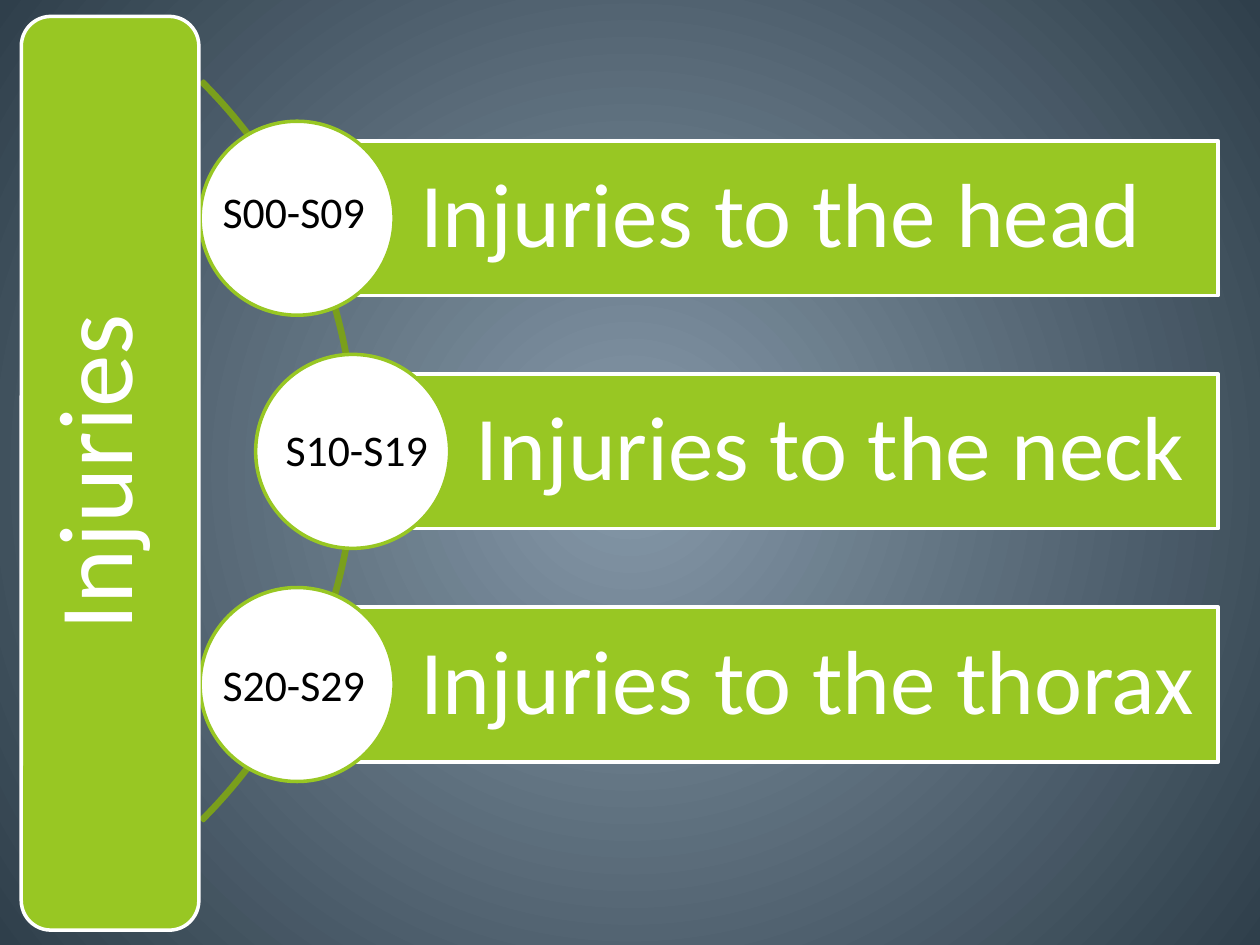
from lxml import etree
from pptx import Presentation
from pptx.dml.color import RGBColor
from pptx.enum.shapes import MSO_SHAPE
from pptx.enum.text import MSO_ANCHOR, PP_ALIGN
from pptx.oxml.ns import qn
from pptx.util import Cm, Pt

GREEN, DARK_GREEN, WHITE, BLACK = "98C723", "7A9F1C", "FFFFFF", "000000"
ROW_HEIGHT, ROW_PITCH, CIRCLE_SIZE = 3.12, 4.7, 3.91

# Row text, code, left indent, and code offset from the bar's corner (cm)
ROWS = [
    ("Injuries to the head", "S00-S09", 0, (-1.75, 0.76)),
    ("Injuries to the neck", "S10-S19", 1.12, (-1.6, 0.86)),
    ("Injuries to the thorax", "S20-S29", 0, (-1.75, 0.89)),
]


def color(value):
    return RGBColor.from_string(value)


def add_box(page, kind, left, top, width, height, fill, line):
    box = page.shapes.add_shape(kind, Cm(left), Cm(top), Cm(width), Cm(height))
    box.shadow.inherit = False
    if fill:
        box.fill.solid()
        box.fill.fore_color.rgb = color(fill)
    else:
        box.fill.background()
    box.line.color.rgb = color(line)
    box.line.width = Pt(2)
    return box


def set_text(box, text, size, font_color, align=PP_ALIGN.LEFT):
    para = box.text_frame.paragraphs[0]
    para.text = text
    para.alignment = align
    para.font.name = "Calibri"
    para.font.size = Pt(size)
    para.font.color.rgb = color(font_color)
    return para


def add_text(page, left, top, width, height, *style):
    box = page.shapes.add_textbox(Cm(left), Cm(top), Cm(width), Cm(height))
    set_text(box, *style)
    return box


def paint_background(page):
    fill = page.background.fill
    fill.gradient()
    for stop, value in zip(fill.gradient_stops, ("8699A9", "2F3F4B")):
        stop.color.rgb = color(value)
    # Circular gradient spreading from the centre
    gradient = page.element.find(".//" + qn("a:gradFill"))
    linear = gradient.find(qn("a:lin"))
    circle = etree.Element(qn("a:path"), path="circle")
    etree.SubElement(circle, qn("a:fillToRect"),
                     l="50000", t="50000", r="50000", b="50000")
    gradient.replace(linear, circle)


def add_arc(page, left, top, size):
    arc = add_box(page, MSO_SHAPE.BLOCK_ARC, left, top, size, size, None, DARK_GREEN)
    for index, value in enumerate((189, 27, 0.003)):
        arc.adjustments[index] = value


def add_row(page, left, top, width, text, code, code_offset):
    # Bar
    bar = add_box(page, MSO_SHAPE.RECTANGLE, left, top, width, ROW_HEIGHT, GREEN, WHITE)
    frame = bar.text_frame
    frame.word_wrap = True
    frame.vertical_anchor = MSO_ANCHOR.MIDDLE
    frame.margin_left = Cm(2.48)
    frame.margin_top = frame.margin_right = frame.margin_bottom = Cm(0.35)
    set_text(bar, text, 52, WHITE).line_spacing = 0.9
    # Circle centred on the bar's left side
    add_box(page, MSO_SHAPE.OVAL, left - CIRCLE_SIZE / 2,
            top + (ROW_HEIGHT - CIRCLE_SIZE) / 2, CIRCLE_SIZE, CIRCLE_SIZE,
            WHITE, GREEN)
    # Code
    across, down = code_offset
    label = add_text(page, left + across, top + down, 3.38, 1.32, code, 25, BLACK)
    label.text_frame.word_wrap = False


def add_side_title(page, left, top, width, height, text):
    # Rounded bar turned on its side around its centre
    shift = (height - width) / 2
    bar = add_box(page, MSO_SHAPE.ROUNDED_RECTANGLE, left - shift, top + shift,
                  height, width, GREEN, WHITE)
    bar.rotation = 270
    # Upward text
    title = add_text(page, left, top + 0.94, 3.07, 16.51,
                     text, 60, WHITE, PP_ALIGN.CENTER)
    title.text_frame.word_wrap = True
    title.text_frame._txBody.bodyPr.set("vert", "vert270")


def main():
    deck = Presentation()
    deck.slide_width, deck.slide_height = Cm(25.4), Cm(19.05)
    page = deck.slides.add_slide(deck.slide_layouts[6])
    paint_background(page)
    add_arc(page, -13.89, -1.45, 21.08)
    left, top, right = 5.99, 2.84, 24.56
    for number, (text, code, indent, code_offset) in enumerate(ROWS):
        add_row(page, left + indent, top + number * ROW_PITCH,
                right - left - indent, text, code, code_offset)
    add_side_title(page, 0.43, 0.33, 3.58, 18.42, "Injuries")
    deck.save("out.pptx")


if __name__ == "__main__":
    main()
